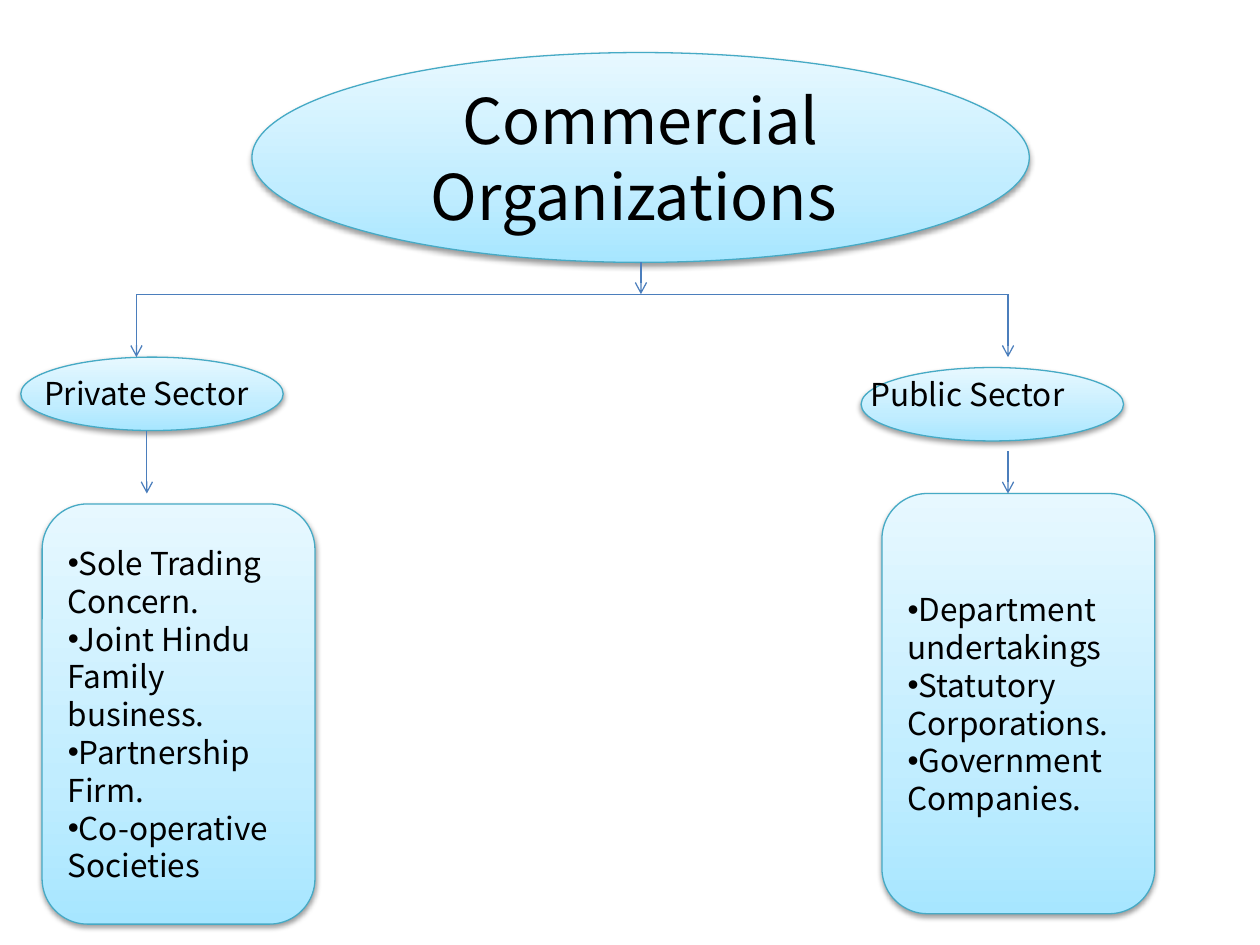
from copy import deepcopy
from dataclasses import dataclass

from lxml.etree import SubElement
from pptx import Presentation
from pptx.dml.color import RGBColor
from pptx.enum.shapes import MSO_CONNECTOR, MSO_SHAPE
from pptx.enum.text import MSO_ANCHOR, MSO_AUTO_SIZE, PP_ALIGN
from pptx.oxml.ns import qn
from pptx.util import Cm, Pt

FONT = "Noto Sans CJK KR"
BLACK = RGBColor(0x00, 0x00, 0x00)
OUTLINE = RGBColor(0x46, 0xAA, 0xC5)
ARROW = RGBColor(0x4B, 0x7E, 0xBC)
GRADIENT = (
    (0, RGBColor(0xA7, 0xE6, 0xFF)),
    (0.35, RGBColor(0xC1, 0xED, 0xFF)),
    (1, RGBColor(0xE7, 0xF8, 0xFF)),
)


@dataclass(frozen=True)
class Box:
    """Left, top, width and height in centimetres."""
    left: float
    top: float
    width: float
    height: float

    def lengths(self) -> tuple:
        return Cm(self.left), Cm(self.top), Cm(self.width), Cm(self.height)


@dataclass(frozen=True)
class Sector:
    name: str
    oval: Box
    label: Box
    panel: Box
    members: tuple[str, ...]


@dataclass(frozen=True)
class Link:
    """Start and end points in centimetres."""
    x1: float
    y1: float
    x2: float
    y2: float
    arrow: bool = True


HEADING_OVAL = Box(5.08, 1.06, 15.67, 4.23)
HEADING_TEXT = Box(7.37, 1.68, 11.09, 2.99)
BRANCH_Y = 5.93

SECTORS = (
    Sector("Private Sector", Box(0.42, 7.2, 5.29, 1.48), Box(0.64, 7.41, 5.93, 1.03),
           Box(0.85, 10.16, 5.5, 8.47),
           ("Sole Trading Concern.", "Joint Hindu Family business.",
            "Partnership Firm.", "Co-operative Societies")),
    Sector("Public Sector", Box(17.36, 7.41, 5.29, 1.48), Box(17.3, 7.44, 5.35, 1.03),
           Box(17.78, 9.95, 5.5, 8.47),
           ("Department undertakings", "Statutory Corporations.",
            "Government Companies.")),
)

LINKS = (
    Link(2.75, BRANCH_Y, 20.32, BRANCH_Y, arrow=False),
    Link(12.92, 5.29, 12.92, BRANCH_Y),
    Link(2.75, BRANCH_Y, 2.75, 7.2),
    Link(20.32, BRANCH_Y, 20.32, 7.2),
    Link(2.96, 8.68, 2.96, 9.95),
    Link(20.32, 9.1, 20.32, 9.95),
)


def format_text(text_frame, size: float, alignment=PP_ALIGN.LEFT) -> None:
    text_frame.word_wrap = True
    for paragraph in text_frame.paragraphs:
        paragraph.alignment = alignment
        for run in paragraph.runs:
            run.font.name = FONT
            run.font.size = Pt(size)
            run.font.color.rgb = BLACK


def add_glossy_shape(slide, kind, box: Box):
    """Add a shape with the blue gradient and a soft shadow below it."""
    shape = slide.shapes.add_shape(kind, *box.lengths())
    shape.line.color.rgb = OUTLINE
    shape.line.width = Pt(0.75)

    # Three-stop gradient, darkest at the bottom
    shape.fill.gradient()
    shape.fill.gradient_angle = 90
    stop_list = shape._element.spPr.find(qn("a:gradFill")).find(qn("a:gsLst"))
    stop_list.append(deepcopy(stop_list[-1]))
    for stop, (position, color) in zip(shape.fill.gradient_stops, GRADIENT):
        stop.position = position
        stop.color.rgb = color

    # Shadow
    shape.shadow.inherit = False
    effects = shape._element.spPr.find(qn("a:effectLst"))
    shadow = SubElement(effects, qn("a:outerShdw"), blurRad=str(Pt(3.15)),
                        dist=str(Pt(1.57)), dir="5400000", rotWithShape="0")
    shadow_color = SubElement(shadow, qn("a:srgbClr"), val=str(BLACK))
    SubElement(shadow_color, qn("a:alpha"), val="38000")
    return shape


def add_link(slide, link: Link) -> None:
    connector = slide.shapes.add_connector(
        MSO_CONNECTOR.STRAIGHT, Cm(link.x1), Cm(link.y1), Cm(link.x2), Cm(link.y2))
    connector.line.color.rgb = ARROW
    connector.line.width = Pt(0.75)
    if link.arrow:
        SubElement(connector.line._get_or_add_ln(), qn("a:tailEnd"), type="arrow")
    SubElement(connector._element.spPr, qn("a:effectLst"))


def add_sector(slide, sector: Sector) -> None:
    # Oval and its label
    add_glossy_shape(slide, MSO_SHAPE.OVAL, sector.oval)
    label = slide.shapes.add_textbox(*sector.label.lengths())
    label.text_frame.text = sector.name
    format_text(label.text_frame, 18)

    # Panel with the bulleted members
    panel = add_glossy_shape(slide, MSO_SHAPE.ROUNDED_RECTANGLE, sector.panel)
    text_frame = panel.text_frame
    text_frame.text = "\n".join(sector.members)
    text_frame.vertical_anchor = MSO_ANCHOR.MIDDLE
    for paragraph in text_frame.paragraphs:
        properties = paragraph._p.get_or_add_pPr()
        SubElement(properties, qn("a:buFont"), typeface="Arial")
        SubElement(properties, qn("a:buChar"), char="•")
    format_text(text_frame, 18)


def add_heading(slide) -> None:
    add_glossy_shape(slide, MSO_SHAPE.OVAL, HEADING_OVAL)
    title = slide.shapes.title
    title.left, title.top, title.width, title.height = HEADING_TEXT.lengths()
    title.text_frame.text = "Commercial Organizations "
    title.text_frame.auto_size = MSO_AUTO_SIZE.NONE
    title.text_frame.vertical_anchor = MSO_ANCHOR.MIDDLE
    format_text(title.text_frame, 36, PP_ALIGN.CENTER)
    # Bring the title in front of its oval
    slide.shapes._spTree.append(title._element)


def main() -> None:
    presentation = Presentation()
    presentation.slide_width = Cm(25.4)
    presentation.slide_height = Cm(19.05)
    slide = presentation.slides.add_slide(presentation.slide_layouts[5])

    add_heading(slide)
    for sector in SECTORS:
        add_sector(slide, sector)
    for link in LINKS:
        add_link(slide, link)

    presentation.save("out.pptx")


if __name__ == "__main__":
    main()
